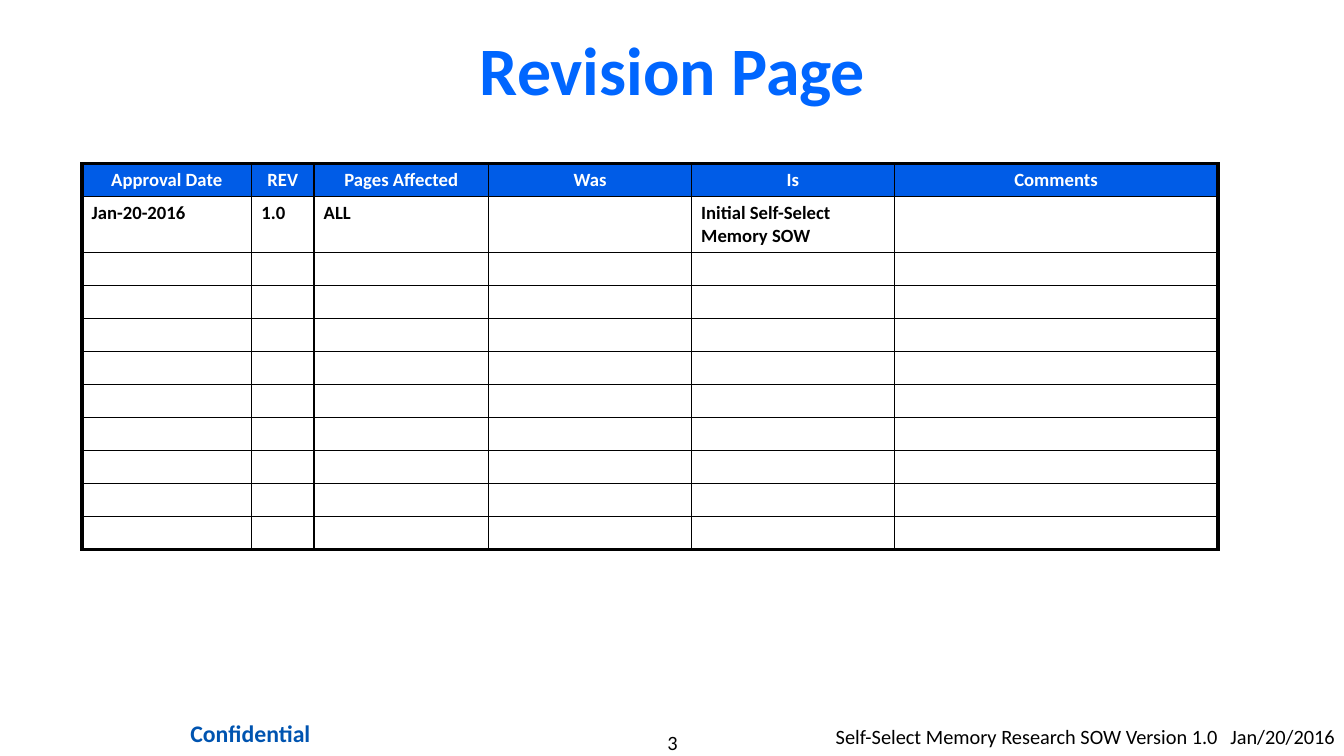
from typing import NamedTuple

from lxml.etree import SubElement
from pptx import Presentation
from pptx.dml.color import RGBColor
from pptx.enum.text import MSO_ANCHOR as Anchor, PP_ALIGN as Align
from pptx.oxml.ns import qn
from pptx.util import Inches, Pt

FONT = "Calibri"
BLACK = RGBColor(0x00, 0x00, 0x00)
WHITE = RGBColor(0xFF, 0xFF, 0xFF)
TITLE_BLUE = RGBColor(0x00, 0x66, 0xFF)
HEADER_BLUE = RGBColor(0x00, 0x5C, 0xE7)
NOTICE_BLUE = RGBColor(0x00, 0x54, 0xB0)

OUTER_LINE, INNER_LINE = Pt(2.25), Pt(1)


class Label(NamedTuple):
    text: str
    left: float
    top: float
    width: float
    height: float
    size: float
    color: RGBColor = BLACK
    bold: bool = False
    align: Align = Align.CENTER
    anchor: Anchor = Anchor.TOP
    inset_x: float = 0
    inset_y: float = 0.05
    tab: float = 0


class Column(NamedTuple):
    heading: str
    width: float
    first_entry: str = ""


LABELS = [
    Label("Confidential", 1.27, 5.84, 1.56, 0.34, 14, NOTICE_BLUE, True, inset_x=0.1),
    Label("Self-Select Memory Research SOW Version 1.0\tJan/20/2016",
          6.84, 5.88, 4.16, 0.3, 12, align=Align.LEFT, tab=3.23),
    Label("3", 4.54, 5.98, 1.93, 0.2, 12, inset_y=0),
    Label("Revision Page", 1.79, 0.25, 7.43, 0.62, 40, TITLE_BLUE, True,
          anchor=Anchor.MIDDLE, inset_x=0.1),
]

COLUMNS = [
    Column("Approval Date", 1.39, "Jan-20-2016"),
    Column("REV", 0.51, "1.0"),
    Column("Pages Affected", 1.43, "ALL"),
    Column("Was", 1.66),
    Column("Is", 1.66, "Initial Self-Select Memory SOW"),
    Column("Comments", 2.65),
]
EMPTY_ROWS = 9
ROW_HEIGHTS = [0.27, 0.46] + [0.27] * EMPTY_ROWS


def add_run(paragraph, text: str, size: float, color: RGBColor, bold: bool) -> None:
    run = paragraph.add_run()
    run.text = text
    font = run.font
    font.name, font.size, font.bold = FONT, Pt(size), bold
    font.color.rgb = color


def add_label(slide, label: Label) -> None:
    box = slide.shapes.add_textbox(Inches(label.left), Inches(label.top),
                                   Inches(label.width), Inches(label.height))
    frame = box.text_frame
    frame.word_wrap = not label.tab
    frame.vertical_anchor = label.anchor
    frame.margin_left = frame.margin_right = Inches(label.inset_x)
    frame.margin_top = frame.margin_bottom = Inches(label.inset_y)
    paragraph = frame.paragraphs[0]
    paragraph.alignment = label.align
    if label.tab:
        stops = SubElement(paragraph._p.get_or_add_pPr(), qn("a:tabLst"))
        SubElement(stops, qn("a:tab"), pos=str(Inches(label.tab)), algn="l")
    add_run(paragraph, label.text, label.size, label.color, label.bold)


def set_borders(cell, widths: dict[str, int]) -> None:
    """Draw the cell's edges; called before the fill, which must follow them."""
    properties = cell._tc.get_or_add_tcPr()
    for edge, width in widths.items():
        line = SubElement(properties, qn(f"a:ln{edge}"), w=str(width))
        SubElement(SubElement(line, qn("a:solidFill")), qn("a:srgbClr"), val=str(BLACK))


def fill_cell(cell, text: str, is_header: bool) -> None:
    cell.margin_left = cell.margin_right = Inches(0.08)
    cell.margin_top = cell.margin_bottom = Inches(0.04)
    if is_header:
        cell.fill.solid()
        cell.fill.fore_color.rgb = HEADER_BLUE
    else:
        cell.fill.background()
    paragraph = cell.text_frame.paragraphs[0]
    paragraph.alignment = Align.CENTER if is_header else Align.LEFT
    if text:
        add_run(paragraph, text, 11, WHITE if is_header else BLACK, True)
    else:
        paragraph.font.size = Pt(11)
        SubElement(paragraph._p, qn("a:endParaRPr"), sz="1100")


def add_revision_table(slide) -> None:
    last_row, last_column = len(ROW_HEIGHTS) - 1, len(COLUMNS) - 1
    table = slide.shapes.add_table(
        len(ROW_HEIGHTS), len(COLUMNS), Inches(0.67), Inches(1.34),
        Inches(sum(column.width for column in COLUMNS)), Inches(sum(ROW_HEIGHTS))).table
    table.horz_banding = False
    for c, column in enumerate(COLUMNS):
        table.columns[c].width = Inches(column.width)
        entries = [column.heading, column.first_entry] + [""] * EMPTY_ROWS
        for r, entry in enumerate(entries):
            on_frame = {"L": c == 0, "R": c == last_column, "T": r == 0, "B": r == last_row}
            cell = table.cell(r, c)
            set_borders(cell, {edge: OUTER_LINE if outer else INNER_LINE
                               for edge, outer in on_frame.items()})
            fill_cell(cell, entry, is_header=r == 0)
    for row, height in zip(table.rows, ROW_HEIGHTS):
        row.height = Inches(height)


def main() -> None:
    deck = Presentation()
    deck.slide_width, deck.slide_height = Inches(11), Inches(6.19)
    slide = deck.slides.add_slide(deck.slide_layouts[6])

    # Footer and title
    for label in LABELS:
        add_label(slide, label)

    # Revision history
    add_revision_table(slide)

    deck.save("out.pptx")


if __name__ == "__main__":
    main()
